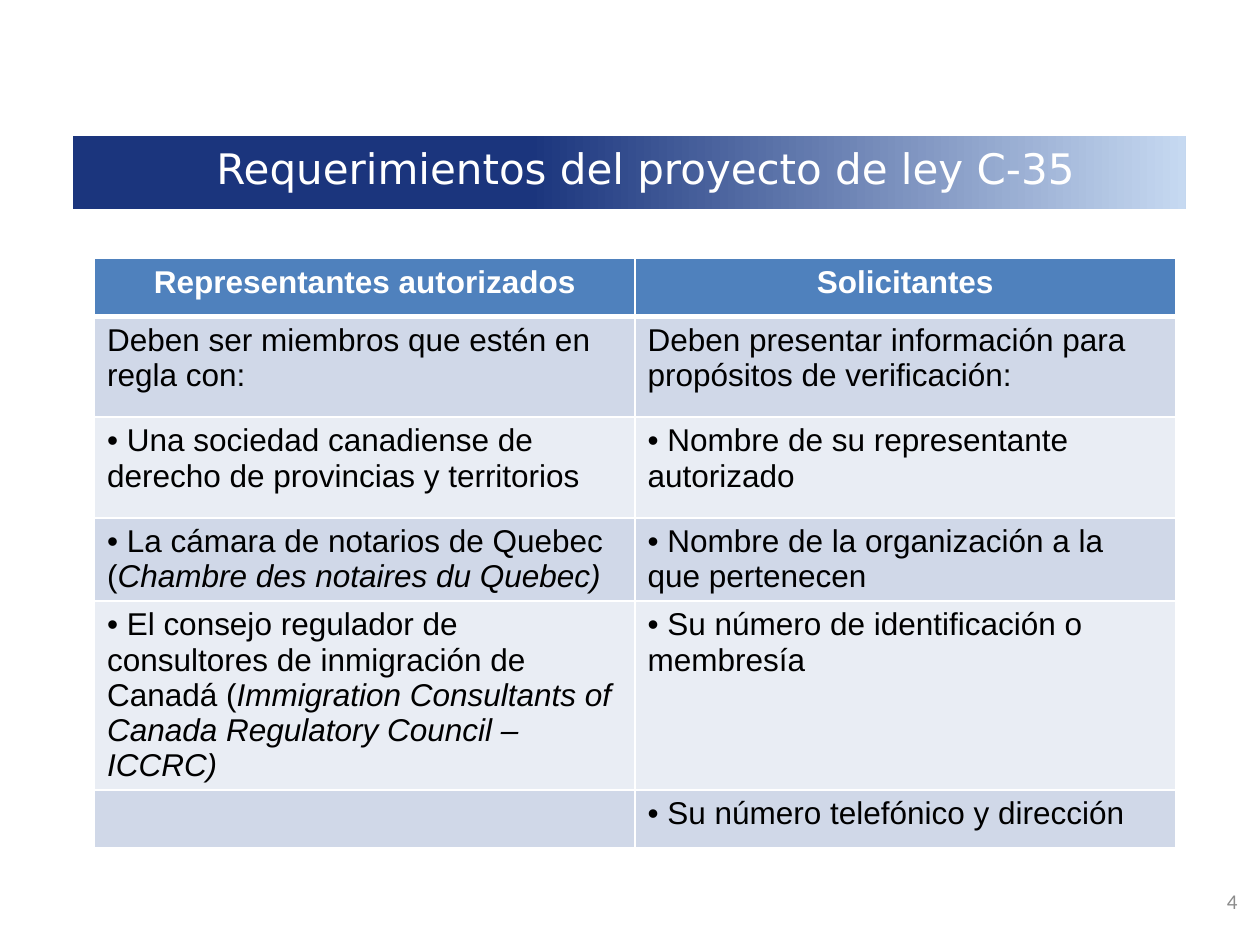
from dataclasses import dataclass

from lxml.etree import SubElement
from pptx import Presentation
from pptx.dml.color import RGBColor
from pptx.enum.shapes import MSO_SHAPE
from pptx.enum.text import MSO_ANCHOR, PP_ALIGN
from pptx.oxml.ns import qn
from pptx.util import Inches, Pt


@dataclass(frozen=True)
class Theme:
    white: str = "FFFFFF"
    black: str = "000000"
    navy: str = "1B357D"
    pale_blue: str = "C6D9F1"
    header: str = "4F81BD"
    bands: tuple[str, str] = ("D0D8E8", "E9EDF4")
    number: str = "8C8C8C"
    title_font: str = "DejaVu Sans"
    table_font: str = "Arial"
    number_font: str = "Calibri"
    title_size: int = 24
    table_size: int = 18
    number_size: int = 12
    border: int = 1
    header_border: int = 3


@dataclass(frozen=True)
class Entry:
    text: str = ""
    italic: str = ""
    bullet: bool = False


THEME = Theme()
HEADINGS = ("Representantes autorizados", "Solicitantes")
ROWS = (
    (Entry("Deben ser miembros que estén en regla con:"),
     Entry("Deben presentar información para propósitos de verificación:")),
    (Entry(" Una sociedad canadiense de derecho de provincias y territorios", bullet=True),
     Entry(" Nombre de su representante autorizado", bullet=True)),
    (Entry(" La cámara de notarios de Quebec (", "Chambre des notaires du Quebec)", True),
     Entry(" Nombre de la organización a la que pertenecen", bullet=True)),
    (Entry(" El consejo regulador de consultores de inmigración de Canadá (",
           "Immigration Consultants of Canada Regulatory Council – ICCRC)", True),
     Entry(" Su número de identificación o membresía", bullet=True)),
    (Entry(), Entry(" Su número telefónico y dirección", bullet=True)),
)
ROW_HEIGHTS = (0.46, 0.8, 0.8, 0.46, 0.8, 0.46)
COLUMN_WIDTH = 4.29


def add_span(para, text: str, *, font: str, size: int, color: str,
             bold: bool = False, italic: bool = False) -> None:
    span = para.add_run()
    span.text = text
    span.font.name = font
    span.font.size = Pt(size)
    span.font.bold = bold
    span.font.italic = italic
    span.font.color.rgb = RGBColor.from_string(color)


def add_text(page, text: str, left: float, top: float, width: float, height: float,
             *, align: PP_ALIGN, **style) -> None:
    box = page.shapes.add_textbox(Inches(left), Inches(top), Inches(width), Inches(height))
    box.text_frame.word_wrap = True
    box.text_frame.vertical_anchor = MSO_ANCHOR.MIDDLE
    para = box.text_frame.paragraphs[0]
    para.alignment = align
    add_span(para, text, **style)


def add_title_band(page) -> None:
    band = page.shapes.add_shape(MSO_SHAPE.RECTANGLE, Inches(0.58), Inches(1.08),
                                 Inches(8.83), Inches(0.58))
    band.shadow.inherit = False
    band.line.fill.background()
    band.fill.gradient()
    band.fill.gradient_angle = 0
    stops = ((0.41, THEME.navy), (1, THEME.pale_blue))
    for stop, (position, color) in zip(band.fill.gradient_stops, stops):
        stop.position = position
        stop.color.rgb = RGBColor.from_string(color)


def style_cell(cell, fill: str, bottom: int = THEME.border) -> None:
    """Give the cell white borders and a solid fill."""
    properties = cell._tc.get_or_add_tcPr()
    for side in "LRTB":
        width = bottom if side == "B" else THEME.border
        line = SubElement(properties, qn(f"a:ln{side}"), w=str(Pt(width)))
        SubElement(SubElement(line, qn("a:solidFill")), qn("a:srgbClr"), val=THEME.white)
    cell.fill.solid()
    cell.fill.fore_color.rgb = RGBColor.from_string(fill)


def add_bullet(para) -> None:
    properties = para._p.get_or_add_pPr()
    properties.set("marL", "0")
    properties.set("indent", "0")
    SubElement(properties, qn("a:buFont"), typeface=THEME.table_font)
    SubElement(properties, qn("a:buChar"), char="•")


def fill_entry(cell, entry: Entry) -> None:
    para = cell.text_frame.paragraphs[0]
    if entry.bullet:
        add_bullet(para)
    for text, italic in ((entry.text, False), (entry.italic, True)):
        if text:
            add_span(para, text, font=THEME.table_font, size=THEME.table_size,
                     color=THEME.black, italic=italic)


def add_requirements_table(page) -> None:
    table = page.shapes.add_table(
        len(ROW_HEIGHTS), len(HEADINGS), Inches(0.75), Inches(2.05),
        Inches(COLUMN_WIDTH * len(HEADINGS)), Inches(sum(ROW_HEIGHTS))).table
    for column in table.columns:
        column.width = Inches(COLUMN_WIDTH)
    for row, height in zip(table.rows, ROW_HEIGHTS):
        row.height = Inches(height)
    for column, heading in enumerate(HEADINGS):
        cell = table.cell(0, column)
        style_cell(cell, THEME.header, THEME.header_border)
        para = cell.text_frame.paragraphs[0]
        para.alignment = PP_ALIGN.CENTER
        add_span(para, heading, font=THEME.table_font, size=THEME.table_size,
                 color=THEME.white, bold=True)
    for row, entries in enumerate(ROWS, start=1):
        for column, entry in enumerate(entries):
            cell = table.cell(row, column)
            style_cell(cell, THEME.bands[(row - 1) % 2])
            fill_entry(cell, entry)


def main() -> None:
    deck = Presentation()
    deck.slide_width, deck.slide_height = Inches(10), Inches(7.5)
    page = deck.slides.add_slide(deck.slide_layouts[6])
    add_title_band(page)
    add_requirements_table(page)
    add_text(page, "Requerimientos del proyecto de ley C-35", 0.75, 1, 8.75, 0.67,
             align=PP_ALIGN.CENTER, font=THEME.title_font, size=THEME.title_size,
             color=THEME.white)
    add_text(page, "4", 9, 6.95, 0.92, 0.4, align=PP_ALIGN.RIGHT,
             font=THEME.number_font, size=THEME.number_size, color=THEME.number)
    deck.save("out.pptx")


if __name__ == "__main__":
    main()
